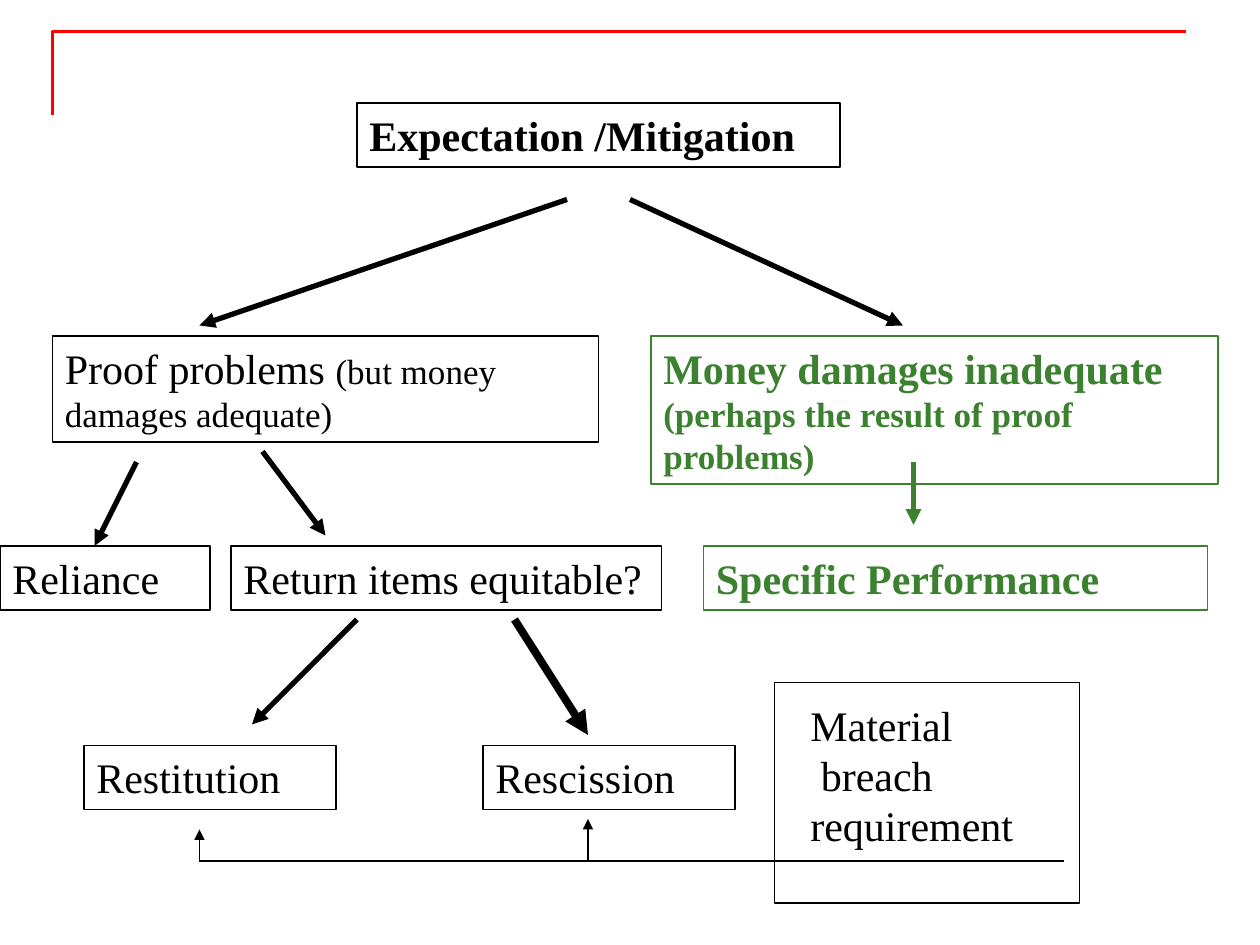
from typing import NamedTuple

from lxml.etree import SubElement
from pptx import Presentation
from pptx.dml.color import RGBColor
from pptx.enum.shapes import MSO_CONNECTOR, MSO_SHAPE
from pptx.enum.text import MSO_ANCHOR, MSO_AUTO_SIZE, PP_ALIGN
from pptx.oxml.ns import qn
from pptx.util import Inches, Pt

# The slide is a grid of 120 columns by 90 rows
COLUMNS, ROWS = 120, 90
CELL = Inches(10) // COLUMNS
BLACK, GREEN, RED = "000000", "3B812F", "FF0000"
FONT = "Times New Roman"
ONE_LINE, TWO_LINES, THREE_LINES = 6.1, 10.1, 14.1


class Box(NamedTuple):
    col: float
    row: float
    width: float
    height: float
    text: str
    detail: str = ""
    color: str = BLACK
    bold: bool = False


class Arrow(NamedTuple):
    start: tuple[float, float]
    end: tuple[float, float]
    weight: float = 3
    color: str = BLACK


BOXES = [
    Box(34, 9.8, 46, ONE_LINE, "Expectation /Mitigation", bold=True),
    Box(5, 32, 52, TWO_LINES, "Proof problems ", "(but money damages adequate)"),
    Box(62, 32, 54, THREE_LINES, "Money damages inadequate ",
        "(perhaps the result of proof problems)", GREEN, True),
    Box(67, 52, 48, ONE_LINE, "Specific Performance", color=GREEN, bold=True),
    Box(0, 52, 20, ONE_LINE, "Reliance"),
    Box(22, 52, 41, ONE_LINE, "Return items equitable?"),
    Box(8, 71, 24, ONE_LINE, "Restitution"),
    Box(46, 71, 24, ONE_LINE, "Rescission"),
]

ARROWS = [
    Arrow((54, 19), (19, 31)),
    Arrow((60, 19), (86, 31)),
    Arrow((87, 44), (87, 50), color=GREEN),
    Arrow((13, 44), (9, 52)),
    Arrow((25, 43), (31, 51)),
    Arrow((34, 59), (24, 69)),
    Arrow((49, 59), (56, 70), 4.5),
    Arrow((19, 82), (19, 79), 0.75),
    Arrow((56, 82), (56, 78), 0.75),
]


def cells(*counts: float) -> list[int]:
    return [round(count * CELL) for count in counts]


def rgb(color: str) -> RGBColor:
    return RGBColor.from_string(color)


def set_line(shape, color: str, weight: float) -> None:
    shape.line.color.rgb = rgb(color)
    shape.line.width = Pt(weight)


def outline(shape, color: str, weight: float = 0.75) -> None:
    shape.shadow.inherit = False
    shape.fill.background()
    set_line(shape, color, weight)


def add_text(paragraph, text: str, *, size: float = 24, color: str = BLACK,
             bold: bool = False) -> None:
    paragraph.alignment = PP_ALIGN.LEFT
    for index, line in enumerate(text.split("\n")):
        if index:
            paragraph.add_line_break()
        run = paragraph.add_run()
        run.text = line
        run.font.name = FONT
        run.font.size = Pt(size)
        run.font.bold = bold
        run.font.color.rgb = rgb(color)


def open_frame(shape):
    frame = shape.text_frame
    frame.word_wrap = True
    frame.auto_size = MSO_AUTO_SIZE.SHAPE_TO_FIT_TEXT
    frame.vertical_anchor = MSO_ANCHOR.TOP
    return frame.paragraphs[0]


def draw_box(shapes, box: Box) -> None:
    shape = shapes.add_shape(
        MSO_SHAPE.RECTANGLE, *cells(box.col, box.row, box.width, box.height))
    outline(shape, box.color)
    paragraph = open_frame(shape)
    add_text(paragraph, box.text, color=box.color, bold=box.bold)
    if box.detail:
        add_text(paragraph, box.detail, size=20, color=box.color, bold=box.bold)


def draw_arrow(shapes, arrow: Arrow) -> None:
    connector = shapes.add_connector(
        MSO_CONNECTOR.STRAIGHT, *cells(*arrow.start, *arrow.end))
    set_line(connector, arrow.color, arrow.weight)
    SubElement(connector.line._get_or_add_ln(), qn("a:tailEnd"), type="triangle")
    SubElement(connector._element.spPr, qn("a:effectLst"))


def draw_corner(shapes) -> None:
    builder = shapes.build_freeform(5, 11, scale=CELL)
    builder.add_line_segments([(5, 3), (113, 3)], close=False)
    outline(builder.convert_to_shape(), RED, 1.5)


def draw_requirement(shapes) -> None:
    note = shapes.add_textbox(*cells(76, 66, 23, 15.6))
    add_text(open_frame(note), "Material\n breach requirement")
    # The callout's line runs left beneath both remedies
    callout = shapes.add_shape(MSO_SHAPE.LINE_CALLOUT_1, *cells(73.8, 65, 29, 21))
    outline(callout, BLACK)
    for index, share in enumerate((0.81, 0.95, 0.81, -1.89)):
        callout.adjustments[index] = share


def main() -> None:
    deck = Presentation()
    deck.slide_width, deck.slide_height = cells(COLUMNS, ROWS)
    shapes = deck.slides.add_slide(deck.slide_layouts[6]).shapes

    draw_corner(shapes)
    for box in BOXES:
        draw_box(shapes, box)
    draw_requirement(shapes)
    for arrow in ARROWS:
        draw_arrow(shapes, arrow)

    deck.save("out.pptx")


if __name__ == "__main__":
    main()
